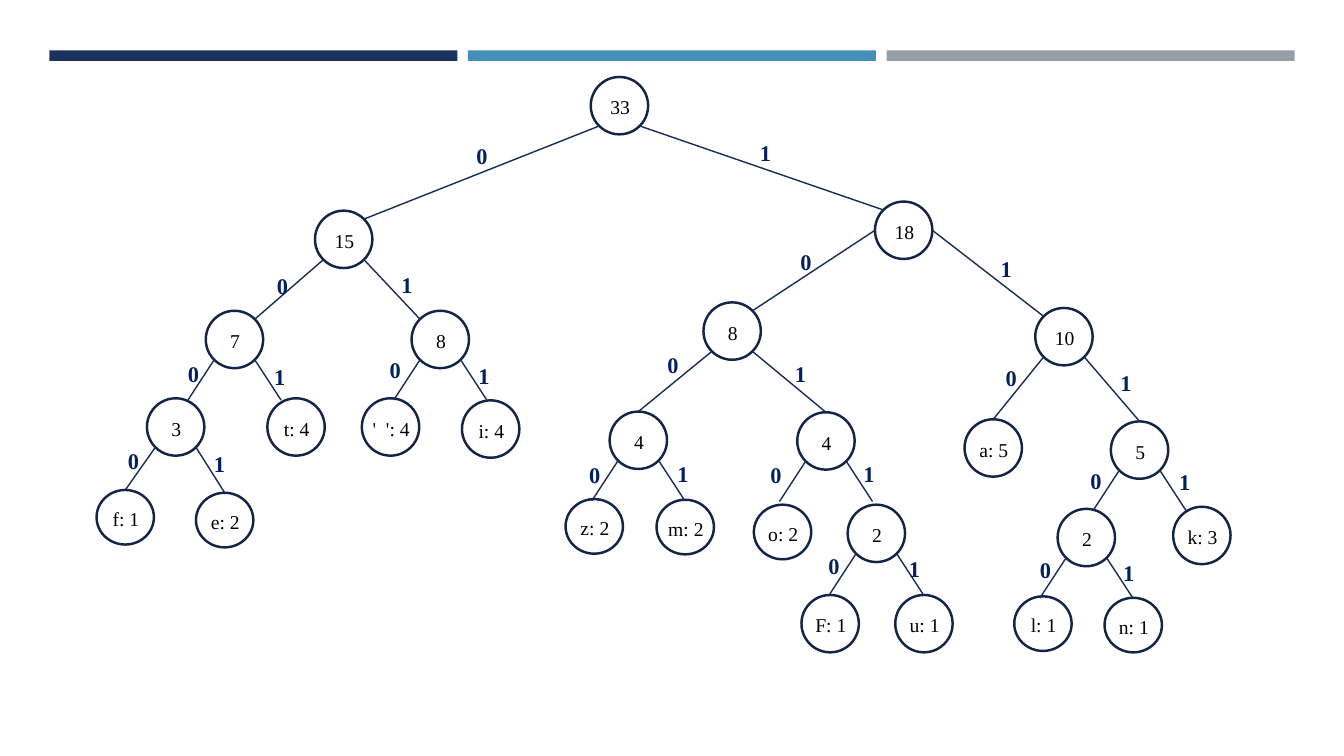
from dataclasses import dataclass
from math import sqrt

from lxml.etree import SubElement
from pptx import Presentation
from pptx.dml.color import RGBColor
from pptx.enum.shapes import MSO_CONNECTOR, MSO_SHAPE
from pptx.enum.text import MSO_ANCHOR, PP_ALIGN
from pptx.oxml.ns import qn
from pptx.util import Pt

# Huffman code: (text, node left, node top, node height, bit left, bit top)
ROUND, FLAT = 41, 39
TREE = {
    "": ("33", 422, 55, ROUND, None, None),
    "0": ("15", 225, 150.5, ROUND, 325.5, 98),
    "1": ("18", 625, 144, ROUND, 528, 96),
    "00": ("7", 147, 222, ROUND, 183, 191),
    "01": ("8", 294, 222, ROUND, 272, 190),
    "10": ("8", 502.5, 216, ROUND, 557, 174),
    "11": ("10", 739.5, 220, ROUND, 700, 178.5),
    "000": ("3", 105, 284.5, ROUND, 119.5, 253.5),
    "001": ("t: 4", 191, 284.5, ROUND, 181, 255.5),
    "010": ("'  ': 4", 258.5, 284.5, ROUND, 263.5, 251),
    "011": ("i: 4", 330, 286, ROUND, 327, 255),
    "100": ("4", 435.5, 294, ROUND, 462, 247),
    "101": ("4", 569.5, 294.5, ROUND, 553, 253.5),
    "110": ("a: 5", 689, 299.5, ROUND, 703.5, 256.5),
    "111": ("5", 793.5, 301, ROUND, 785.5, 260),
    "0000": ("f: 1", 69, 350, FLAT, 76.5, 316),
    "0001": ("e: 2", 140, 352, FLAT, 138, 318),
    "1000": ("z: 2", 404, 356.5, FLAT, 406, 325.5),
    "1001": ("m: 2", 469, 357, FLAT, 469, 325),
    "1010": ("o: 2", 538.5, 360.5, FLAT, 535.5, 325.5),
    "1011": ("2", 605.5, 360.5, ROUND, 602, 325),
    "1110": ("2", 755.5, 363.5, ROUND, 764, 330),
    "1111": ("k: 3", 838, 362, ROUND, 827.5, 331),
    "10110": ("F: 1", 572.5, 425, ROUND, 577, 391),
    "10111": ("u: 1", 639.5, 425, ROUND, 634.5, 393),
    "11100": ("l: 1", 724.5, 426, FLAT, 728, 394),
    "11101": ("n: 1", 789, 427, FLAT, 787.5, 395.5),
}
SIDE_PARENTS = {"1"}                 # branches leave at left and right
TOP_PARENTS = {"10", "11", "000"}    # branches end on top of the child
TWIG_WIDTH, TWIG_HEIGHT = 18.75, 28.75
BIT_WIDTH, BIT_HEIGHT = 37.5, 26.5
BAR_LEFT, BAR_TOP, BAR_WIDTH, BAR_HEIGHT, BAR_STEP = 35.25, 36, 291.5, 7.5, 299


@dataclass(frozen=True)
class Theme:
    font: str = "Times New Roman"
    bars: tuple = ("1A3260", "4590B8", "969FA7")
    outline: str = "132547"
    branch: str = "172D56"
    node_text: str = "000000"
    bit_text: str = "002060"
    node_size: int = 14
    bit_size: int = 16
    outline_width: float = 1.75
    branch_width: float = 1


THEME = Theme()


def points(*values):
    return [Pt(value) for value in values]


def write(frame, text, size, color, bold=False):
    frame.text = text
    line = frame.paragraphs[0]
    line.alignment = PP_ALIGN.CENTER
    font = line.runs[0].font
    font.name, font.size, font.bold = THEME.font, Pt(size), bold
    font.color.rgb = RGBColor.from_string(color)


def add_bar(slide, index, color):
    bar = slide.shapes.add_shape(
        MSO_SHAPE.RECTANGLE,
        *points(BAR_LEFT + index * BAR_STEP, BAR_TOP, BAR_WIDTH, BAR_HEIGHT))
    bar.shadow.inherit = False
    bar.fill.solid()
    bar.fill.fore_color.rgb = RGBColor.from_string(color)
    bar.line.fill.background()


def add_node(slide, text, left, top, height):
    node = slide.shapes.add_shape(
        MSO_SHAPE.OVAL, *points(left, top, ROUND, height))
    node.shadow.inherit = False
    node.fill.background()
    node.line.color.rgb = RGBColor.from_string(THEME.outline)
    node.line.width = Pt(THEME.outline_width)
    frame = node.text_frame
    frame.word_wrap = False
    frame.vertical_anchor = MSO_ANCHOR.MIDDLE
    frame.margin_left, frame.margin_right = points(1, 0)
    frame.margin_top, frame.margin_bottom = points(2, 0)
    write(frame, text, THEME.node_size, THEME.node_text)


def branch_ends(code):
    """Start on the parent's rim and end at the child, in points."""
    parent, side = code[:-1], 1 if code[-1] == "1" else -1
    radius = ROUND / 2
    diagonal = radius / sqrt(2)
    _, parent_left, parent_top, *_ = TREE[parent]
    _, left, top, *_ = TREE[code]
    if parent in SIDE_PARENTS:
        start = parent_left + radius + side * radius, parent_top + radius
    else:
        start = (parent_left + radius + side * diagonal,
                 parent_top + radius + diagonal)
    if len(code) <= 2:
        end = left + radius - side * diagonal, top + radius - diagonal
    elif parent in TOP_PARENTS:
        end = left + radius, top
    else:
        end = start[0] + side * TWIG_WIDTH, start[1] + TWIG_HEIGHT
    return *start, *end


def add_branch(slide, code):
    branch = slide.shapes.add_connector(
        MSO_CONNECTOR.STRAIGHT, *points(*branch_ends(code)))
    branch.line.color.rgb = RGBColor.from_string(THEME.branch)
    branch.line.width = Pt(THEME.branch_width)
    SubElement(branch._element.spPr, qn("a:effectLst"))


def add_bit(slide, bit, left, top):
    label = slide.shapes.add_textbox(*points(left, top, BIT_WIDTH, BIT_HEIGHT))
    label.text_frame.word_wrap = True
    write(label.text_frame, bit, THEME.bit_size, THEME.bit_text, bold=True)


def main():
    deck = Presentation()
    deck.slide_width, deck.slide_height = points(960, 540)
    slide = deck.slides.add_slide(deck.slide_layouts[6])
    for index, color in enumerate(THEME.bars):
        add_bar(slide, index, color)
    for text, left, top, height, *_ in TREE.values():
        add_node(slide, text, left, top, height)
    codes = [code for code in TREE if code]
    for code in codes:
        add_branch(slide, code)
    for code in codes:
        add_bit(slide, code[-1], *TREE[code][-2:])
    deck.save("out.pptx")


if __name__ == "__main__":
    main()
